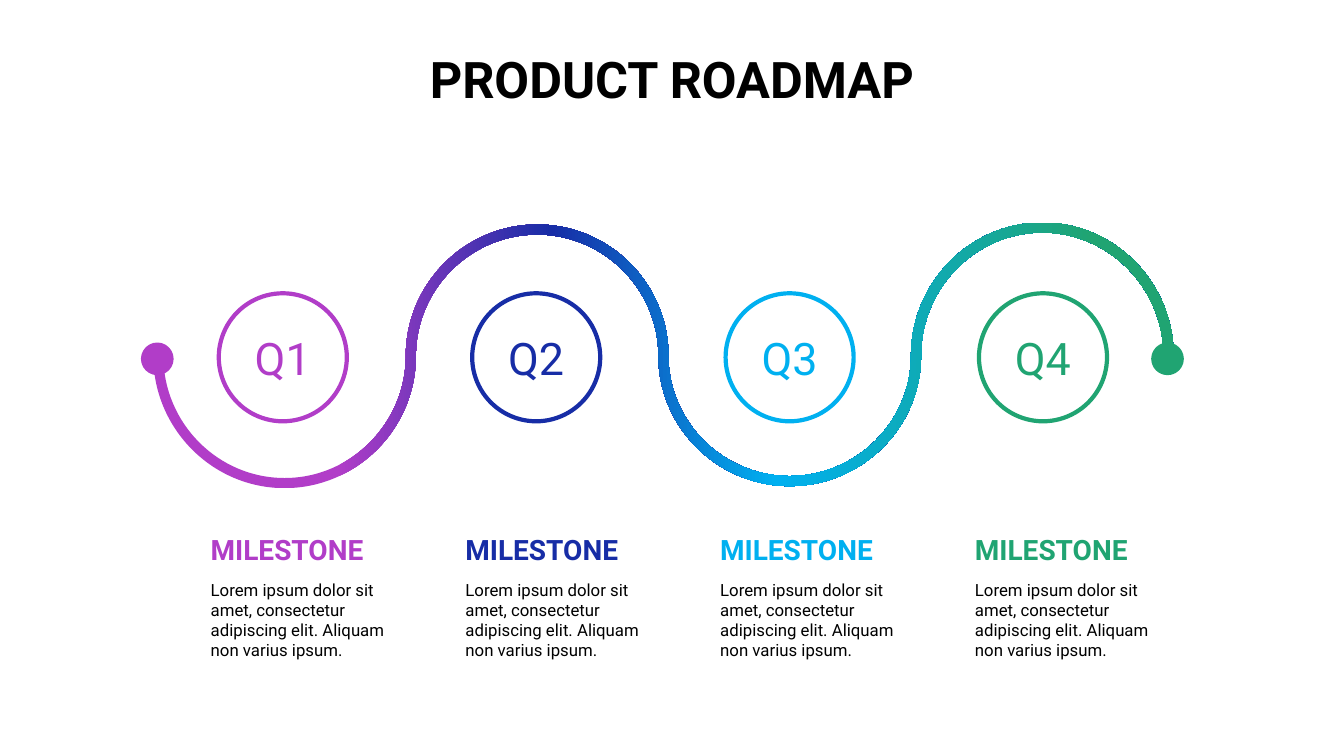
from copy import deepcopy
from dataclasses import dataclass

from lxml import etree
from pptx import Presentation
from pptx.dml.color import RGBColor
from pptx.enum.shapes import MSO_SHAPE
from pptx.enum.text import MSO_ANCHOR, MSO_AUTO_SIZE, PP_ALIGN
from pptx.oxml.ns import qn
from pptx.util import Inches, Pt

OVAL = MSO_SHAPE.OVAL
TOP, MIDDLE = MSO_ANCHOR.TOP, MSO_ANCHOR.MIDDLE
LEFT, CENTER = PP_ALIGN.LEFT, PP_ALIGN.CENTER
NO_AUTOFIT = MSO_AUTO_SIZE.NONE
COMPARISON_LAYOUT = 4
ARC_HANDLE = 0.55


@dataclass(frozen=True)
class Theme:
    """Colours, font and type sizes of the slide."""
    font: str = "Roboto"
    text: str = "000000"
    paper: str = "FFFFFF"
    quarters: tuple = ("B13DC8", "172DA6", "00B0F0", "20A472")
    gradient_stops: tuple = (0.18, 0.39, 0.61, 0.92)
    title_size: int = 36
    quarter_size: int = 32
    heading_size: int = 20
    body_size: int = 12


THEME = Theme()
DESCRIPTION = ("Lorem ipsum dolor sit amet, consectetur adipiscing elit. "
               "Aliquam non varius ipsum.")


def rgb(color):
    """Turn a hex string into a colour."""
    return RGBColor.from_string(color)


def place(shape, box):
    """Move a shape to a box of left, top, width and height in inches."""
    shape.left, shape.top, shape.width, shape.height = map(Inches, box)


def write(shape, text, size, color, bold=False, align=LEFT, anchor=TOP,
          line_spacing=1.0, space_before=10):
    """Fill a shape with one unbulleted paragraph."""
    frame = shape.text_frame
    frame.word_wrap = True
    frame.auto_size = NO_AUTOFIT
    frame.vertical_anchor = anchor
    frame.text = text
    paragraph = frame.paragraphs[0]
    paragraph.alignment = align
    paragraph.line_spacing = line_spacing
    paragraph.space_before = Pt(space_before)
    properties = paragraph._p.get_or_add_pPr()
    properties.set("marL", "0")
    properties.set("indent", "0")
    etree.SubElement(properties, qn("a:buNone"))
    font = paragraph.font
    font.name, font.size, font.bold = THEME.font, Pt(size), bold
    font.color.rgb = rgb(color)


def add_circle(slide, box, fill, line, weight):
    """Draw an outlined circle in the box."""
    circle = slide.shapes.add_shape(OVAL, *map(Inches, box))
    circle.shadow.inherit = False
    circle.fill.solid()
    circle.fill.fore_color.rgb = rgb(fill)
    circle.line.color.rgb = rgb(line)
    circle.line.width = Pt(weight)
    return circle


def wave_edge(box, offset):
    """List the curve points of one edge of the ribbon, from left to right."""
    left, top, width, height = box
    thickness, rise = 0.1, 0.01
    radius = (width - thickness) / (2 * len(THEME.quarters))
    middle = top + height / 2
    points = [(left + thickness / 2 - offset * thickness / 2, middle)]
    for arc in range(len(THEME.quarters)):
        side = 1 if arc % 2 == 0 else -1
        arc_radius = radius + side * offset * thickness / 2
        center = left + thickness / 2 + radius * (2 * arc + 1)
        apex = middle + rise * (1 - arc) + side * arc_radius
        start, end = center - arc_radius, center + arc_radius
        handle = ARC_HANDLE * arc_radius
        handle_y = middle + ARC_HANDLE * (apex - middle)
        points += [(start, handle_y), (center - handle, apex), (center, apex),
                   (center + handle, apex), (end, handle_y), (end, middle)]
    return [(Inches(x), Inches(y)) for x, y in points]


def bend(lines):
    """Turn each three line segments into one cubic curve."""
    for first, second, third in zip(lines[::3], lines[1::3], lines[2::3]):
        first.tag = qn("a:cubicBezTo")
        for line in (second, third):
            first.append(line[0])
            line.getparent().remove(line)


def add_wave(slide, box):
    """Draw the gradient ribbon and its end dots."""
    lower, upper = wave_edge(box, 1), wave_edge(box, -1)[::-1]
    builder = slide.shapes.build_freeform(*lower[0])
    builder.add_line_segments(lower[1:] + upper, close=True)
    ribbon = builder.convert_to_shape()
    lines = list(ribbon._element.spPr.iter(qn("a:lnTo")))
    bend(lines[:len(lower) - 1])
    bend(lines[len(lower):])
    ribbon.shadow.inherit = False
    ribbon.line.fill.background()
    ribbon.fill.gradient()
    ribbon.fill.gradient_angle = 0
    stop_list = ribbon._element.spPr.find(".//" + qn("a:gsLst"))
    for stop in list(stop_list):
        stop_list.append(deepcopy(stop))
    for stop, position, color in zip(ribbon.fill.gradient_stops,
                                     THEME.gradient_stops, THEME.quarters):
        stop.position = position
        stop.color.rgb = rgb(color)

    left, top, width, height = box
    dot = 0.24
    for center_x, color in ((left + 0.04, THEME.quarters[0]),
                            (left + width - 0.06, THEME.quarters[-1])):
        dot_box = (center_x - dot / 2, top + height / 2 + 0.03 - dot / 2, dot, dot)
        add_circle(slide, dot_box, color, color, 6)


def add_quarters(slide, box):
    """Draw the row of quarter circles."""
    left, top, width, size = box
    pitch = (width - size) / (len(THEME.quarters) - 1)
    for index, color in enumerate(THEME.quarters):
        circle = add_circle(slide, (left + index * pitch, top, size, size),
                            THEME.paper, color, 3)
        write(circle, f"Q{index + 1}", THEME.quarter_size, color,
              align=CENTER, anchor=MIDDLE, space_before=0)


def add_milestones(slide, box, bodies):
    """Set a heading and a description under each quarter."""
    left, top, width, height = box
    column, heading_height, description_top = 1.98, 0.33, 0.43
    pitch = (width - column) / (len(THEME.quarters) - 1)
    for index, (color, body) in enumerate(zip(THEME.quarters, bodies)):
        column_left = left + index * pitch
        heading = slide.shapes.add_textbox(
            *map(Inches, (column_left, top, column, heading_height)))
        write(heading, "MILESTONE", THEME.heading_size, color, bold=True,
              line_spacing=0.9)
        place(body, (column_left, top + description_top, column,
                     height - description_top))
        write(body, DESCRIPTION, THEME.body_size, THEME.text)


def add_title(slide, box):
    """Set the slide title in the box."""
    title = slide.shapes.title
    place(title, box)
    write(title, "PRODUCT ROADMAP", THEME.title_size, THEME.text, bold=True,
          align=CENTER, line_spacing=0.9)


def build_roadmap(presentation):
    """Add the roadmap slide."""
    slide = presentation.slides.add_slide(
        presentation.slide_layouts[COMPARISON_LAYOUT])
    bodies = [holder for holder in slide.placeholders
              if holder.placeholder_format.idx in range(1, 5)]
    add_title(slide, (0.25, 0.5, 12.83, 0.69))
    add_quarters(slide, (2.17, 2.91, 8.81, 1.27))
    add_wave(slide, (1.52, 2.21, 10.12, 2.64))
    add_milestones(slide, (1.99, 5.27, 9.56, 1.2), bodies)


def main():
    """Build and save the presentation."""
    presentation = Presentation()
    presentation.slide_width, presentation.slide_height = Inches(13.33), Inches(7.5)
    build_roadmap(presentation)
    presentation.save("out.pptx")


if __name__ == "__main__":
    main()
